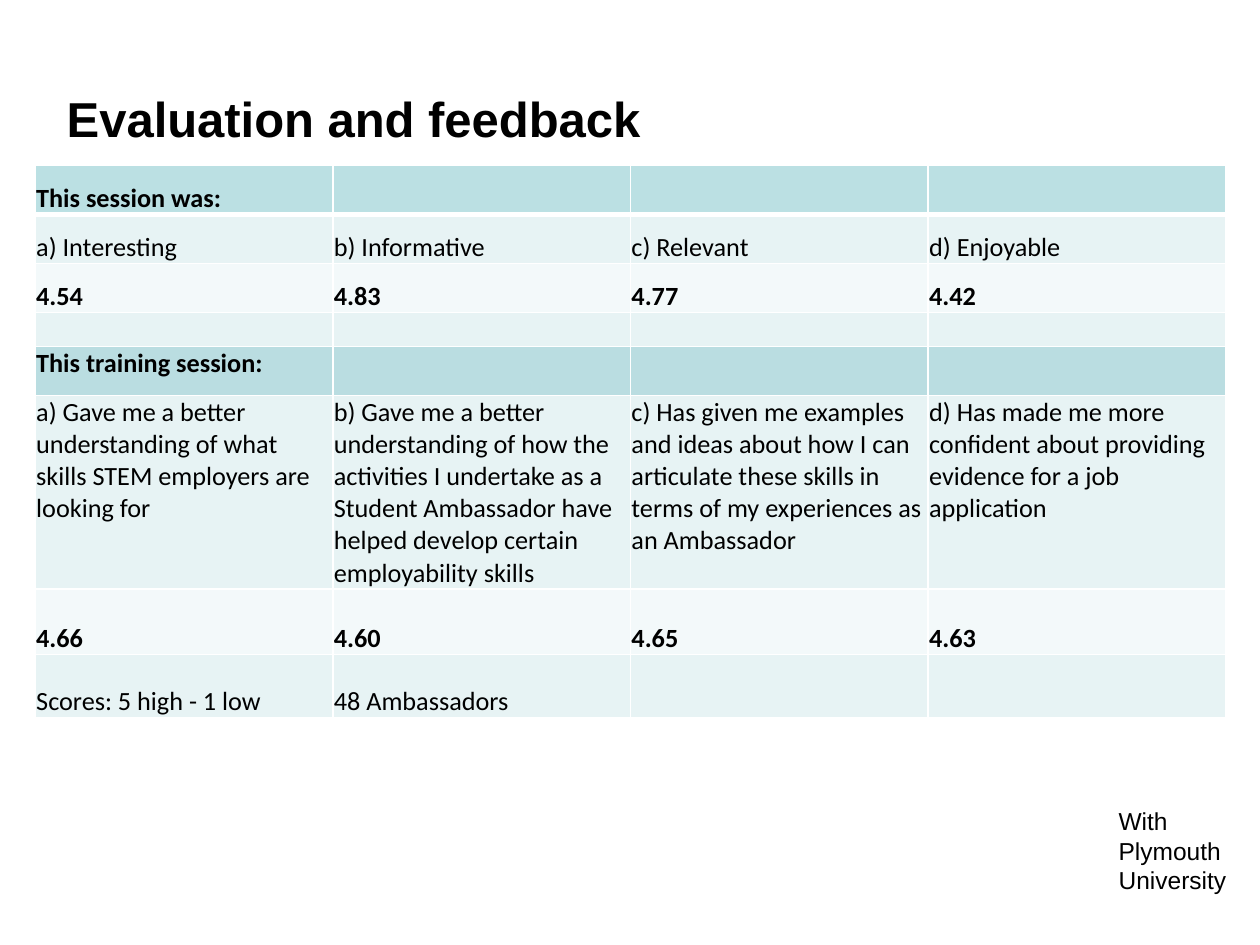
"""Build the evaluation and feedback slide with its table of session scores."""
from lxml import etree
from pptx import Presentation
from pptx.dml.color import RGBColor
from pptx.enum.text import MSO_ANCHOR, MSO_AUTO_SIZE, PP_ALIGN
from pptx.oxml.ns import qn
from pptx.util import Cm, Pt

TOP, MIDDLE, BOTTOM = MSO_ANCHOR.TOP, MSO_ANCHOR.MIDDLE, MSO_ANCHOR.BOTTOM
LEFT = PP_ALIGN.LEFT
NO_AUTOFIT = MSO_AUTO_SIZE.NONE

COLOURS = {
    "text": "000000",
    "border": "FFFFFF",
    "header": "BBE0E3",
    "subheader": "BADDE1",
    "label": "E7F3F4",
    "score": "F3F9FA",
}
TITLE = "Evaluation and feedback"
PARTNER_LINES = ["With", "Plymouth", "University"]
ROWS = [
    ("header", 0.99, BOTTOM, ["This session was:"]),
    ("label", 0.99, BOTTOM, ["a) Interesting", "b) Informative", "c) Relevant", "d) Enjoyable"]),
    ("score", 0.99, BOTTOM, ["4.54", "4.83", "4.77", "4.42"]),
    ("label", 0.68, TOP, []),
    ("subheader", 0.99, TOP, ["This training session:"]),
    ("label", 3.9, TOP, [
        "a) Gave me a better understanding of what skills STEM employers are looking for",
        "b) Gave me a better understanding of how the activities I undertake as a "
        "Student Ambassador have helped develop certain employability skills",
        "c) Has given me examples and ideas about how I can articulate these skills "
        "in terms of my experiences as an Ambassador",
        "d) Has made me more confident about providing evidence for a job application",
    ]),
    ("score", 1.32, BOTTOM, ["4.66", "4.60", "4.65", "4.63"]),
    ("label", 1.28, BOTTOM, ["Scores: 5 high - 1 low", "48 Ambassadors"]),
]
COLUMN_COUNT = 4
COLUMN_WIDTH = 6
CELL_SIZE = 15


def add_span(para, text, size, font_name, bold=False):
    span = para.add_run()
    span.text = text
    span.font.size = Pt(size)
    span.font.name = font_name
    span.font.bold = bold
    span.font.color.rgb = RGBColor.from_string(COLOURS["text"])


def add_border(cell, side, width):
    line = etree.SubElement(cell._tc.get_or_add_tcPr(), qn(f"a:ln{side}"), w=str(Pt(width)))
    fill = etree.SubElement(line, qn("a:solidFill"))
    etree.SubElement(fill, qn("a:srgbClr"), val=COLOURS["border"])


def format_cell(cell, kind, anchor, text, widths):
    cell.margin_left = cell.margin_right = cell.margin_top = Cm(0.02)
    cell.margin_bottom = 0
    cell.vertical_anchor = anchor
    for side, width in widths.items():
        add_border(cell, side, width)
    cell.fill.solid()
    cell.fill.fore_color.rgb = RGBColor.from_string(COLOURS[kind])
    para = cell.text_frame.paragraphs[0]
    if text:
        add_span(para, text, CELL_SIZE, "Calibri", kind != "label")
    else:
        etree.SubElement(para._p, qn("a:endParaRPr"), sz=str(CELL_SIZE * 100))


def add_title(page):
    title = page.shapes.title
    title.left, title.top, title.width, title.height = Cm(1.09), Cm(1.32), Cm(21.6), Cm(2.11)
    title.text_frame.auto_size = NO_AUTOFIT
    title.text_frame.vertical_anchor = MIDDLE
    para = title.text_frame.paragraphs[0]
    para.alignment = LEFT
    add_span(para, TITLE, 28, "Arial", True)


def add_partner(page):
    box = page.shapes.add_textbox(Cm(22.3), Cm(16.13), Cm(3.1), Cm(2.06))
    box.text_frame.word_wrap = True
    para = box.text_frame.paragraphs[0]
    for index, text in enumerate(PARTNER_LINES):
        if index:
            para.add_line_break()
        add_span(para, text, 14, "Arial")


def add_scores(page):
    height = sum(row[1] for row in ROWS)
    table = page.shapes.add_table(
        len(ROWS), COLUMN_COUNT, Cm(0.71), Cm(3.33), Cm(COLUMN_COUNT * COLUMN_WIDTH), Cm(height)
    ).table
    for column in table.columns:
        column.width = Cm(COLUMN_WIDTH)
    for index, (kind, row_height, anchor, texts) in enumerate(ROWS):
        table.rows[index].height = Cm(row_height)
        widths = {"L": 1, "R": 1, "T": 3 if index == 1 else 1, "B": 3 if index == 0 else 1}
        for column in range(COLUMN_COUNT):
            text = texts[column] if column < len(texts) else ""
            format_cell(table.cell(index, column), kind, anchor, text, widths)


def main():
    deck = Presentation()
    deck.slide_width, deck.slide_height = Cm(25.4), Cm(19.05)
    page = deck.slides.add_slide(deck.slide_layouts[5])
    add_partner(page)
    add_title(page)
    add_scores(page)
    deck.save("out.pptx")


if __name__ == "__main__":
    main()
